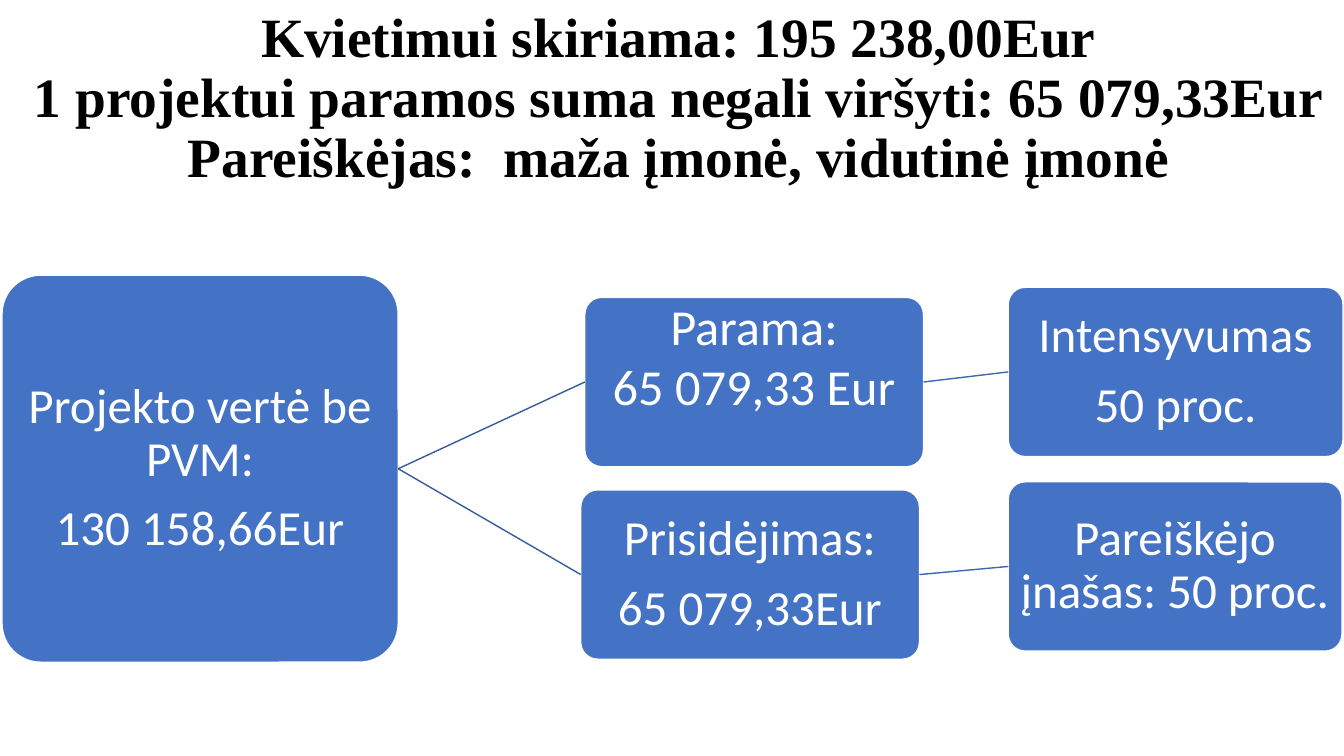
from dataclasses import dataclass

from lxml.etree import SubElement
from pptx import Presentation
from pptx.dml.color import RGBColor
from pptx.enum.shapes import MSO_CONNECTOR, MSO_SHAPE
from pptx.enum.text import MSO_ANCHOR, MSO_AUTO_SIZE, PP_ALIGN
from pptx.oxml.ns import qn
from pptx.util import Inches, Pt


@dataclass(frozen=True)
class Theme:
    box: RGBColor = RGBColor(0x44, 0x72, 0xC4)
    white: RGBColor = RGBColor(0xFF, 0xFF, 0xFF)
    black: RGBColor = RGBColor(0, 0, 0)
    trunk_line: RGBColor = RGBColor(0x36, 0x5B, 0x9D)
    branch_line: RGBColor = RGBColor(0x3E, 0x67, 0xB2)
    title_font: str = "Times New Roman"
    box_font: str = "Calibri"
    title_size: float = 39.6
    box_size: float = 35
    support_size: float = 36


THEME = Theme()
RIGHT, LEFT = 3, 1
LINE_SPACING = 0.9


def add_run(p, text, font, size, color, bold=False):
    r = p.add_run()
    r.text = text
    r.font.name = font
    r.font.size = Pt(size)
    r.font.color.rgb = color
    r.font.bold = bold


def add_title(s, lines):
    sp = s.shapes.title
    sp.left, sp.top = Inches(0), Inches(0.26)
    sp.width, sp.height = Inches(13.46), Inches(1.45)
    tf = sp.text_frame
    tf.auto_size = MSO_AUTO_SIZE.NONE
    tf.vertical_anchor = MSO_ANCHOR.MIDDLE
    p = tf.paragraphs[0]
    p.alignment = PP_ALIGN.CENTER
    p.line_spacing = LINE_SPACING
    for i, line in enumerate(lines):
        if i:
            p.add_line_break()
        add_run(p, line, THEME.title_font, THEME.title_size, THEME.black, bold=True)


def add_box(s, x, y, w, h, lines, size=THEME.box_size, gap=12, anchor=MSO_ANCHOR.MIDDLE):
    """Add a rounded box; gap is the space in points after each paragraph."""
    sp = s.shapes.add_shape(MSO_SHAPE.ROUNDED_RECTANGLE,
                            Inches(x), Inches(y), Inches(w), Inches(h))
    sp.adjustments[0] = 0.1
    sp.shadow.inherit = False
    sp.fill.solid()
    sp.fill.fore_color.rgb = THEME.box
    sp.line.color.rgb = THEME.white
    sp.line.width = Pt(1)
    tf = sp.text_frame
    tf.word_wrap = True
    tf.vertical_anchor = anchor
    tf.margin_left = tf.margin_right = Inches(0.02)
    tf.margin_top = tf.margin_bottom = Inches(0)
    for i, line in enumerate(lines):
        p = tf.add_paragraph() if i else tf.paragraphs[0]
        p.alignment = PP_ALIGN.CENTER
        p.line_spacing = LINE_SPACING
        p.space_after = Pt(gap)
        add_run(p, line, THEME.box_font, size, THEME.white)
    return sp


def join(s, parent, child, color):
    """Draw a line from the parent's right side to the child's left side."""
    c = s.shapes.add_connector(MSO_CONNECTOR.STRAIGHT, 0, 0, 0, 0)
    c.begin_connect(parent, RIGHT)
    c.end_connect(child, LEFT)
    c.line.color.rgb = color
    c.line.width = Pt(1)
    SubElement(c._element.spPr, qn("a:effectLst"))


def main():
    prs = Presentation()
    prs.slide_width, prs.slide_height = Inches(13.33), Inches(7.5)
    s = prs.slides.add_slide(prs.slide_layouts[5])
    add_title(s, ["Kvietimui skiriama: 195 238,00Eur",
                  "1 projektui paramos suma negali viršyti: 65 079,33Eur",
                  "Pareiškėjas:  maža įmonė, vidutinė įmonė"])

    project = add_box(s, 0.02, 2.73, 3.93, 3.84,
                      ["Projekto vertė be PVM:", "130 158,66Eur"])
    support = add_box(s, 5.8, 2.95, 3.36, 1.68, ["Parama:", "65 079,33 Eur"],
                      size=THEME.support_size, gap=4, anchor=MSO_ANCHOR.TOP)
    intensity = add_box(s, 10, 2.85, 3.32, 1.68, ["Intensyvumas", "50 proc."])
    contribution = add_box(s, 5.76, 4.86, 3.36, 1.68,
                           ["Prisidėjimas:", "65 079,33Eur"])
    share = add_box(s, 10, 4.78, 3.31, 1.68, ["Pareiškėjo įnašas: 50 proc."])

    for middle, last in ((support, intensity), (contribution, share)):
        join(s, project, middle, THEME.trunk_line)
        join(s, middle, last, THEME.branch_line)

    prs.save("out.pptx")


if __name__ == "__main__":
    main()
